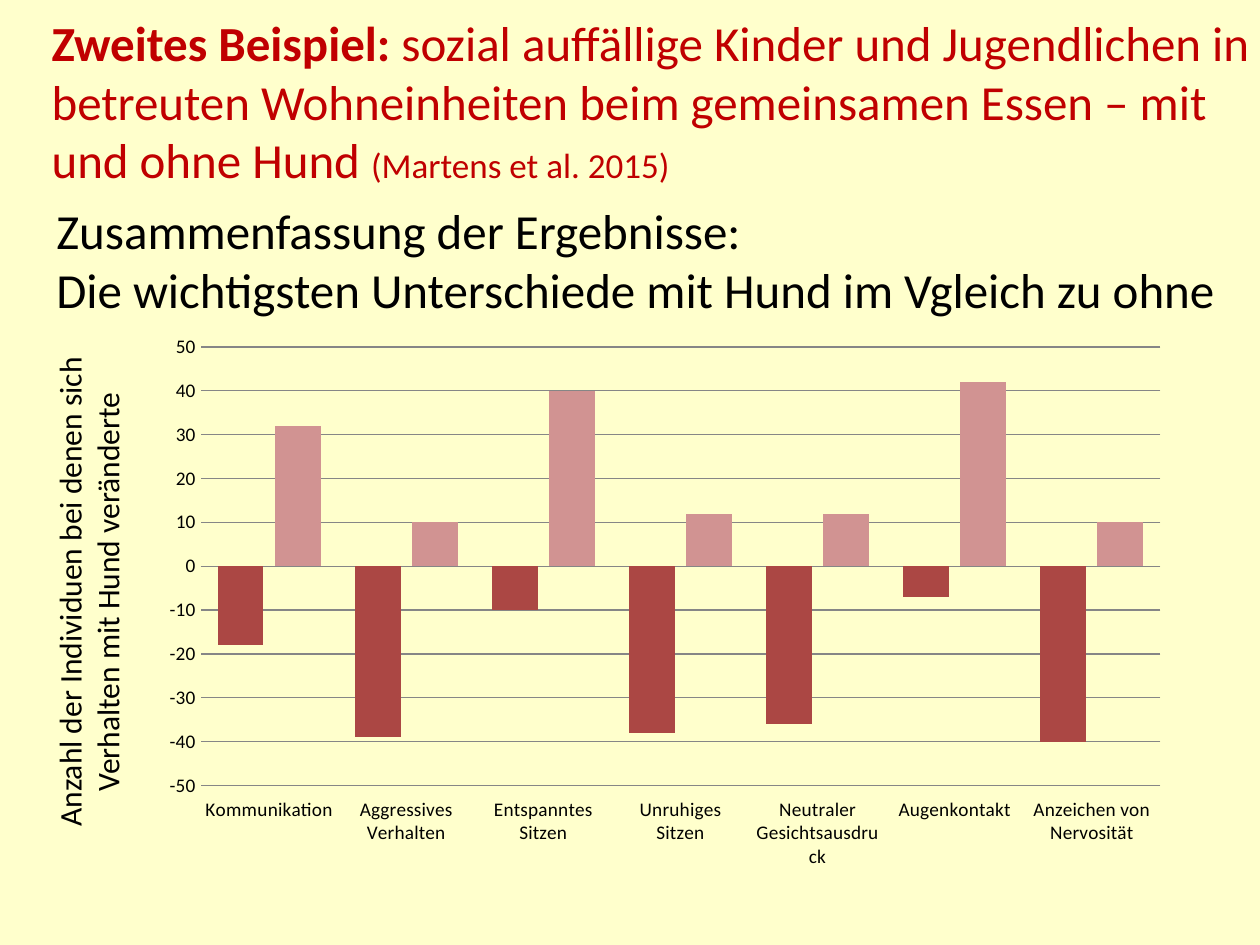
from dataclasses import dataclass
from typing import NamedTuple

from pptx import Presentation
from pptx import util as u
from pptx.chart import data as chart_data
from pptx.dml import color
from pptx.enum import chart as ch, shapes, text
from pptx.oxml import ns

PX = 914400 / 126


class Box(NamedTuple):
    left: int
    top: int
    width: int
    height: int

    def emu(self):
        return [u.Emu(round(length * PX)) for length in self]


@dataclass(frozen=True)
class Theme:
    font: str = "Calibri"
    paper: str = "FFFFCC"
    ink: str = "000000"
    accent: str = "C00000"
    grid: str = "868686"
    bars: tuple = ("AB4744", "D19392")
    heading: int = 28
    citation: int = 20
    axis_title: int = 18
    axis: int = 11


THEME = Theme()

CATEGORIES = (
    "Kommunikation",
    "Aggressives Verhalten",
    "Entspanntes Sitzen",
    "Unruhiges Sitzen",
    "Neutraler Gesichtsausdruck",
    "Augenkontakt",
    "Anzeichen von Nervosität",
)
CHANGES = {
    "Series 1": (-18, -39, -10, -38, -36, -7, -40),
    "Series 2": (32, 10, 40, 12, 12, 42, 10),
}


def rgb(code):
    return color.RGBColor.from_string(code)


def style_font(font, size, ink=THEME.ink, bold=False):
    font.name = THEME.font
    font.size = u.Pt(size)
    font.bold = bold
    font.color.rgb = rgb(ink)


def add_span(para, wording, size, ink=THEME.ink, bold=False):
    span = para.add_run()
    span.text = wording
    style_font(span.font, size, ink, bold)


def place_title(page, box):
    title = page.shapes.title
    title.left, title.top, title.width, title.height = box.emu()
    frame = title.text_frame
    frame.word_wrap = True
    frame.auto_size = text.MSO_AUTO_SIZE.NONE
    frame.vertical_anchor = text.MSO_ANCHOR.TOP
    para = frame.paragraphs[0]
    para.alignment = text.PP_ALIGN.LEFT
    add_span(para, "Zweites Beispiel: ", THEME.heading, THEME.accent, bold=True)
    add_span(
        para,
        "sozial auffällige Kinder und Jugendlichen in betreuten Wohneinheiten "
        "beim gemeinsamen Essen – mit und ohne Hund ",
        THEME.heading,
        THEME.accent,
    )
    add_span(para, "(Martens et al. 2015)", THEME.citation, THEME.accent)


def add_summary(page, box):
    panel = page.shapes.add_shape(shapes.MSO_SHAPE.RECTANGLE, *box.emu())
    panel.shadow.inherit = False
    panel.fill.solid()
    panel.fill.fore_color.rgb = rgb(THEME.paper)
    panel.line.fill.background()
    frame = panel.text_frame
    frame.word_wrap = False
    frame.vertical_anchor = text.MSO_ANCHOR.TOP
    lines = (
        "Zusammenfassung der Ergebnisse:",
        "Die wichtigsten Unterschiede mit Hund im Vgleich zu ohne",
    )
    for index, line in enumerate(lines):
        para = frame.add_paragraph() if index else frame.paragraphs[0]
        para.alignment = text.PP_ALIGN.LEFT
        add_span(para, line, THEME.heading)


def keep_labels_level(axis):
    """Stop long category labels from tilting, so that they wrap."""
    style_font(axis.tick_labels.font, THEME.axis)
    body = axis._element.find(ns.qn("c:txPr")).find(ns.qn("a:bodyPr"))
    body.set("rot", "0")
    body.set("vert", "horz")


def add_change_chart(page, box):
    values = chart_data.CategoryChartData()
    values.categories = CATEGORIES
    for name, changes in CHANGES.items():
        values.add_series(name, changes)
    chart = page.shapes.add_chart(
        ch.XL_CHART_TYPE.COLUMN_CLUSTERED, *box.emu(), values
    ).chart
    chart.has_title = False
    chart.has_legend = False
    style_font(chart.font, THEME.axis)

    plot = chart.plots[0]
    plot.vary_by_categories = False
    plot.gap_width = 75
    plot.overlap = -25
    for series, fill in zip(plot.series, THEME.bars):
        series.invert_if_negative = False
        series.format.fill.solid()
        series.format.fill.fore_color.rgb = rgb(fill)

    category_axis, value_axis = chart.category_axis, chart.value_axis
    for axis in (category_axis, value_axis):
        axis.major_tick_mark = ch.XL_TICK_MARK.NONE
        axis.minor_tick_mark = ch.XL_TICK_MARK.NONE
    category_axis.tick_label_position = ch.XL_TICK_LABEL_POSITION.LOW
    category_axis.format.line.color.rgb = rgb(THEME.grid)
    keep_labels_level(category_axis)
    value_axis.minimum_scale, value_axis.maximum_scale = -50, 50
    value_axis.major_unit = 10
    value_axis.format.line.fill.background()
    value_axis.has_major_gridlines = True
    value_axis.major_gridlines.format.line.color.rgb = rgb(THEME.grid)


def add_axis_title(page, box):
    """Fill the upright box with text that reads from bottom to top."""
    shift = (box.height - box.width) // 2
    flat = Box(box.left - shift, box.top + shift, box.height, box.width)
    label = page.shapes.add_textbox(*flat.emu())
    label.rotation = 270
    frame = label.text_frame
    frame.word_wrap = True
    para = frame.paragraphs[0]
    para.alignment = text.PP_ALIGN.CENTER
    add_span(
        para,
        "Anzahl der Individuen bei denen sich Verhalten mit Hund veränderte",
        THEME.axis_title,
    )


def add_results_slide(deck):
    page = deck.slides.add_slide(deck.slide_layouts[5])
    page.background.fill.solid()
    page.background.fill.fore_color.rgb = rgb(THEME.paper)
    place_title(page, Box(39, 6, 1235, 190))
    add_summary(page, Box(44, 194, 1197, 131))
    add_change_chart(page, Box(149, 324, 1032, 556))
    add_axis_title(page, Box(44, 333, 90, 518))


def main():
    deck = Presentation()
    deck.slide_width, deck.slide_height = u.Inches(10), u.Inches(7.5)
    add_results_slide(deck)
    deck.save("out.pptx")


if __name__ == "__main__":
    main()
